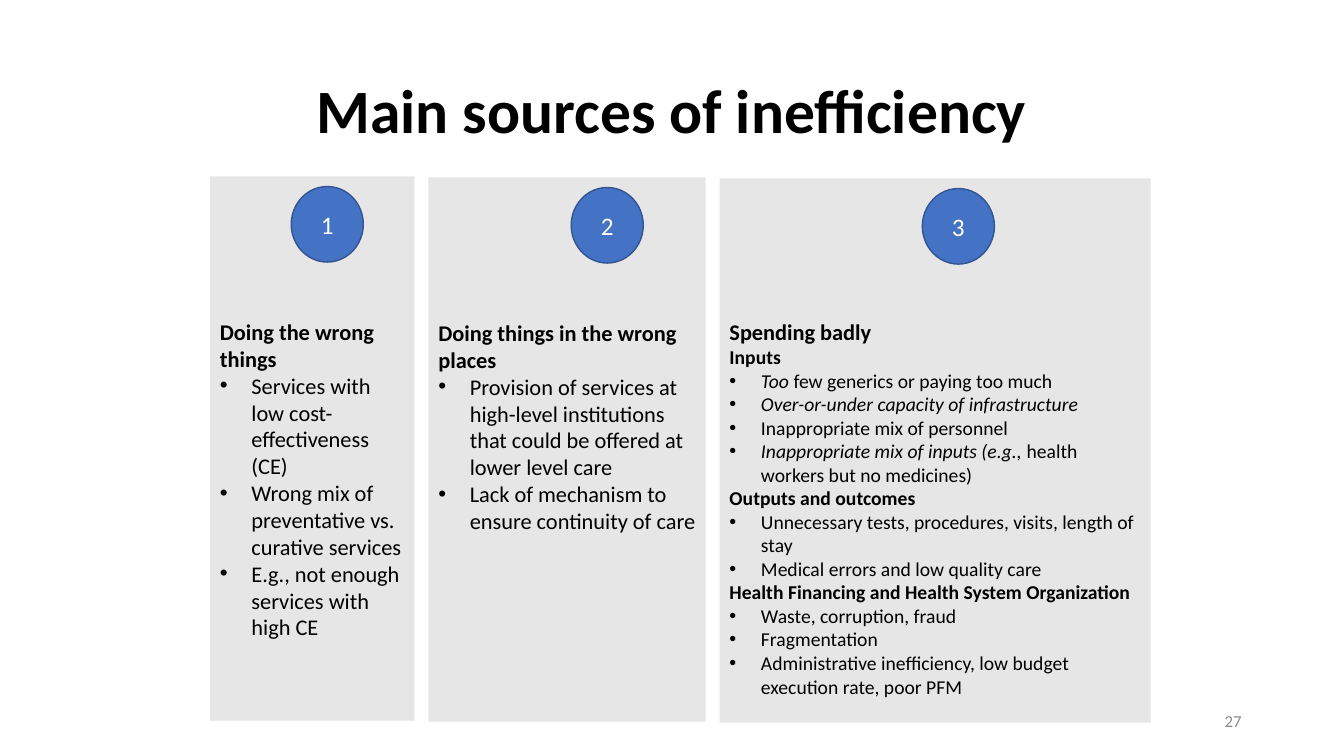
from dataclasses import dataclass

from lxml.etree import SubElement
from pptx import Presentation
from pptx.dml.color import RGBColor as RGB
from pptx.enum.shapes import MSO_SHAPE as Shape
from pptx.enum.text import MSO_ANCHOR as Anchor, PP_ALIGN as Align
from pptx.oxml.ns import qn
from pptx.util import Pt


@dataclass(frozen=True)
class Theme:
    font: str = "Calibri"
    ink: RGB = RGB(0x00, 0x00, 0x00)
    muted: RGB = RGB(0x8C, 0x8C, 0x8C)
    panel: RGB = RGB(0xE7, 0xE6, 0xE6)
    badge: RGB = RGB(0x44, 0x72, 0xC4)
    badge_edge: RGB = RGB(0x32, 0x54, 0x91)
    badge_ink: RGB = RGB(0xFF, 0xFF, 0xFF)
    title_size: int = 44
    badge_size: int = 18
    heading_size: int = 16
    detail_size: int = 14
    number_size: int = 12
    bullet_indent: float = 22.5


class SlideBuilder:
    def __init__(self, slide, theme):
        self.slide = slide
        self.theme = theme

    def style(self, run, size, color, bold=False, italic=False):
        font = run.font
        font.name = self.theme.font
        font.size = Pt(size)
        font.color.rgb = color
        font.bold = bold
        font.italic = italic

    def label(self, box, text, size, color, align, bold=False):
        frame = box.text_frame
        frame.word_wrap = True
        frame.vertical_anchor = Anchor.MIDDLE
        frame.text = text
        line = frame.paragraphs[0]
        line.alignment = align
        self.style(line.runs[0], size, color, bold)
        return line

    def text(self, bounds, *label):
        box = self.slide.shapes.add_textbox(*map(Pt, bounds))
        return self.label(box, *label)

    def block(self, preset, bounds, fill, edge=None):
        block = self.slide.shapes.add_shape(preset, *map(Pt, bounds))
        block.shadow.inherit = False
        block.fill.solid()
        block.fill.fore_color.rgb = fill
        if edge is None:
            block.line.fill.background()
        else:
            block.line.color.rgb = edge
            block.line.width = Pt(1)
        return block

    def bullet(self, paragraph):
        properties = paragraph._p.get_or_add_pPr()
        indent = Pt(self.theme.bullet_indent)
        properties.set("marL", str(indent))
        properties.set("indent", str(-indent))
        SubElement(properties, qn("a:buFont"), typeface="Arial")
        SubElement(properties, qn("a:buChar"), char="•")

    def panel(self, bounds, inset, heading, groups, size):
        panel = self.block(Shape.RECTANGLE, bounds, self.theme.panel)
        frame = panel.text_frame
        frame.word_wrap = True
        frame.vertical_anchor = Anchor.TOP
        frame.margin_top = Pt(inset)
        frame.text = heading
        title = frame.paragraphs[0]
        title.alignment = Align.LEFT
        self.style(title.runs[0], self.theme.heading_size, self.theme.ink, bold=True)
        for subheading, points in groups:
            if subheading:
                self.line(frame, [(subheading, False)], size, bold=True)
            for point in points:
                parts = [(point, False)] if isinstance(point, str) else point
                self.bullet(self.line(frame, parts, size))

    def line(self, frame, parts, size, bold=False):
        paragraph = frame.add_paragraph()
        paragraph.alignment = Align.LEFT
        for words, italic in parts:
            run = paragraph.add_run()
            run.text = words
            self.style(run, size, self.theme.ink, bold, italic)
        return paragraph

    def badge(self, left, top, number):
        theme = self.theme
        circle = self.block(Shape.OVAL, (left, top, 51.5, 54), theme.badge, theme.badge_edge)
        self.label(circle, str(number), theme.badge_size, theme.badge_ink, Align.CENTER)


WRONG_THINGS = [(None, [
    "Services with low cost-effectiveness (CE)",
    "Wrong mix of preventative vs. curative services",
    "E.g., not enough services with high CE",
])]
WRONG_PLACES = [(None, [
    "Provision of services at high-level institutions that could be offered at lower level care",
    "Lack of mechanism to ensure continuity of care",
])]
SPENDING_BADLY = [
    ("Inputs", [
        [("Too ", True), ("few generics or paying too much", False)],
        [("Over-or-under capacity of infrastructure", True)],
        "Inappropriate mix of personnel",
        [("Inappropriate mix of inputs (e.g., ", True), ("health workers but no medicines)", False)],
    ]),
    ("Outputs and outcomes", [
        "Unnecessary tests, procedures, visits, length of stay",
        "Medical errors and low quality care",
    ]),
    ("Health Financing and Health System Organization", [
        "Waste, corruption, fraud",
        "Fragmentation",
        "Administrative inefficiency, low budget execution rate, poor PFM",
    ]),
]


def main():
    theme = Theme()
    deck = Presentation()
    deck.slide_width, deck.slide_height = Pt(960), Pt(540)
    builder = SlideBuilder(deck.slides.add_slide(deck.slide_layouts[6]), theme)

    title = builder.text((66, 28.8, 828, 104.4), "Main sources of inefficiency",
                         theme.title_size, theme.ink, Align.CENTER, True)
    title.line_spacing = 0.9
    builder.text((678, 500.5, 216, 28.8), "27", theme.number_size, theme.muted, Align.RIGHT)

    sources = [
        (150, 146, 208, 101.2, "Doing the wrong things", WRONG_THINGS, theme.heading_size),
        (306, 198, 408, 101.2, "Doing things in the wrong places", WRONG_PLACES, theme.heading_size),
        (514, 308, 658.8, 99.8, "Spending badly", SPENDING_BADLY, theme.detail_size),
    ]
    for index, (left, width, badge_left, inset, heading, groups, size) in enumerate(sources):
        top = 126 + 0.72 * index
        builder.panel((left, top, width, 388.8), inset, heading, groups, size)
        builder.badge(badge_left, top + 7.2, index + 1)

    deck.save("out.pptx")


if __name__ == "__main__":
    main()
